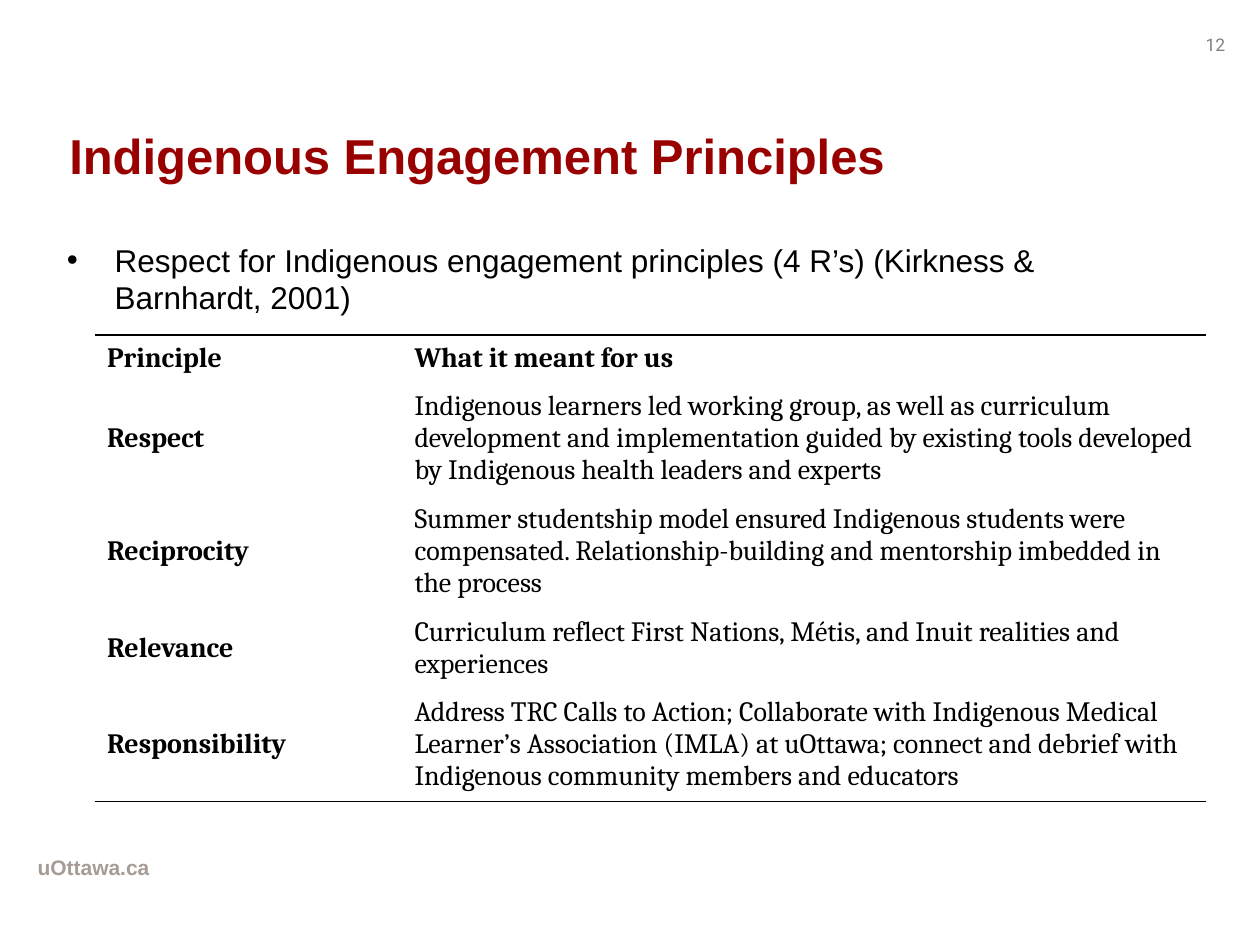
from pptx import Presentation
from pptx.dml.color import RGBColor
from pptx.enum.text import MSO_ANCHOR as Anchor, MSO_AUTO_SIZE as AutoSize, PP_ALIGN as Align
from pptx.oxml import parse_xml
from pptx.oxml.ns import nsdecls, qn
from pptx.util import Inches, Pt

COLORS = {"title": "990000", "text": "000000", "footer": "A69C95", "number": "808080"}

TITLE = "Indigenous Engagement Principles"
BULLET = "Respect for Indigenous engagement principles (4 R’s) (Kirkness & Barnhardt, 2001)"
# Each row: principle, meaning, number of text lines
ROWS = [
    ("Principle", "What it meant for us", 1),
    ("Respect", "Indigenous learners led working group, as well as curriculum development and "
     "implementation guided by existing tools developed by Indigenous health leaders and experts", 3),
    ("Reciprocity", "Summer studentship model ensured Indigenous students were compensated. "
     "Relationship-building and mentorship imbedded in the process", 3),
    ("Relevance", "Curriculum reflect First Nations, Métis, and Inuit realities and experiences", 2),
    ("Responsibility", "Address TRC Calls to Action; Collaborate with Indigenous Medical Learner’s "
     "Association (IMLA) at uOttawa; connect and debrief with Indigenous community members "
     "and educators", 3),
]
COLUMN_WIDTHS = (2.44, 6.38)
LINE_HEIGHT, CELL_PADDING = 0.26, 0.09
PLAIN_TABLE_STYLE = "{2D5ABB26-0587-4C30-8999-92F81FD0307C}"


def add_text(para, text, font_name, size, color, bold=False):
    span = para.add_run()
    span.text = text
    span.font.name = font_name
    span.font.size = Pt(size)
    span.font.bold = bold
    span.font.color.rgb = RGBColor.from_string(COLORS[color])


def place(shape, left, top, width, height):
    shape.left, shape.top = Inches(left), Inches(top)
    shape.width, shape.height = Inches(width), Inches(height)


def add_label(page, bounds, *text_format):
    box = page.shapes.add_textbox(*map(Inches, bounds))
    box.text_frame.word_wrap = True
    add_text(box.text_frame.paragraphs[0], *text_format)


def add_rule(cell, side):
    """Draw a 1 pt line on the cell's top (T) or bottom (B) side."""
    cell._tc.get_or_add_tcPr().insert(0, parse_xml(
        f'<a:ln{side} {nsdecls("a")} w="{Pt(1)}"><a:solidFill>'
        f'<a:srgbClr val="{COLORS["text"]}"/></a:solidFill></a:ln{side}>'))


def fill_title(title):
    place(title, 0.45, 0.76, 8.5, 0.94)
    frame = title.text_frame
    frame.auto_size = AutoSize.NONE
    frame.vertical_anchor = Anchor.MIDDLE
    para = frame.paragraphs[0]
    para.alignment = Align.LEFT
    add_text(para, TITLE, "Arial", 28, "title", True)


def fill_body(body):
    place(body, 0.43, 1.86, 8.82, 4.1)
    frame = body.text_frame
    frame.auto_size = AutoSize.NONE
    para = frame.paragraphs[0]
    para.space_before = Pt(0)
    properties = para._p.get_or_add_pPr()
    properties.set("marL", str(Inches(0.38)))
    properties.set("indent", str(-Inches(0.38)))
    properties.append(parse_xml(f'<a:buFont {nsdecls("a")} typeface="Arial"/>'))
    properties.append(parse_xml(f'<a:buChar {nsdecls("a")} char="•"/>'))
    add_text(para, BULLET, "Arial", 18, "text")


def add_principles(page):
    heights = [lines * LINE_HEIGHT + CELL_PADDING for _, _, lines in ROWS]
    table = page.shapes.add_table(
        len(ROWS), len(COLUMN_WIDTHS), Inches(0.75), Inches(2.66),
        Inches(sum(COLUMN_WIDTHS)), Inches(sum(heights))).table
    table.first_row = table.horz_banding = False
    table._tbl.tblPr.find(qn("a:tableStyleId")).text = PLAIN_TABLE_STYLE
    for column, width in zip(table.columns, COLUMN_WIDTHS):
        column.width = Inches(width)
    for row_index, (principle, meaning, _) in enumerate(ROWS):
        table.rows[row_index].height = Inches(heights[row_index])
        for column_index, text in enumerate((principle, meaning)):
            cell = table.cell(row_index, column_index)
            cell.fill.background()
            cell.vertical_anchor = Anchor.MIDDLE
            bold = row_index == 0 or column_index == 0
            add_text(cell.text_frame.paragraphs[0], text, "Cambria", 16, "text", bold)
            if row_index == 0:
                add_rule(cell, "T")
            if row_index == len(ROWS) - 1:
                add_rule(cell, "B")


def main():
    deck = Presentation()
    deck.slide_width, deck.slide_height = Inches(10), Inches(7.5)
    page = deck.slides.add_slide(deck.slide_layouts[1])
    add_label(page, (9.47, 0.22, 0.47, 0.27), "12", "Roboto", 10, "number")
    add_label(page, (0.2, 6.73, 4.96, 0.39), "uOttawa.ca", "Arial", 12, "footer", True)
    fill_title(page.shapes.title)
    fill_body(page.placeholders[1])
    add_principles(page)
    deck.save("out.pptx")


if __name__ == "__main__":
    main()
